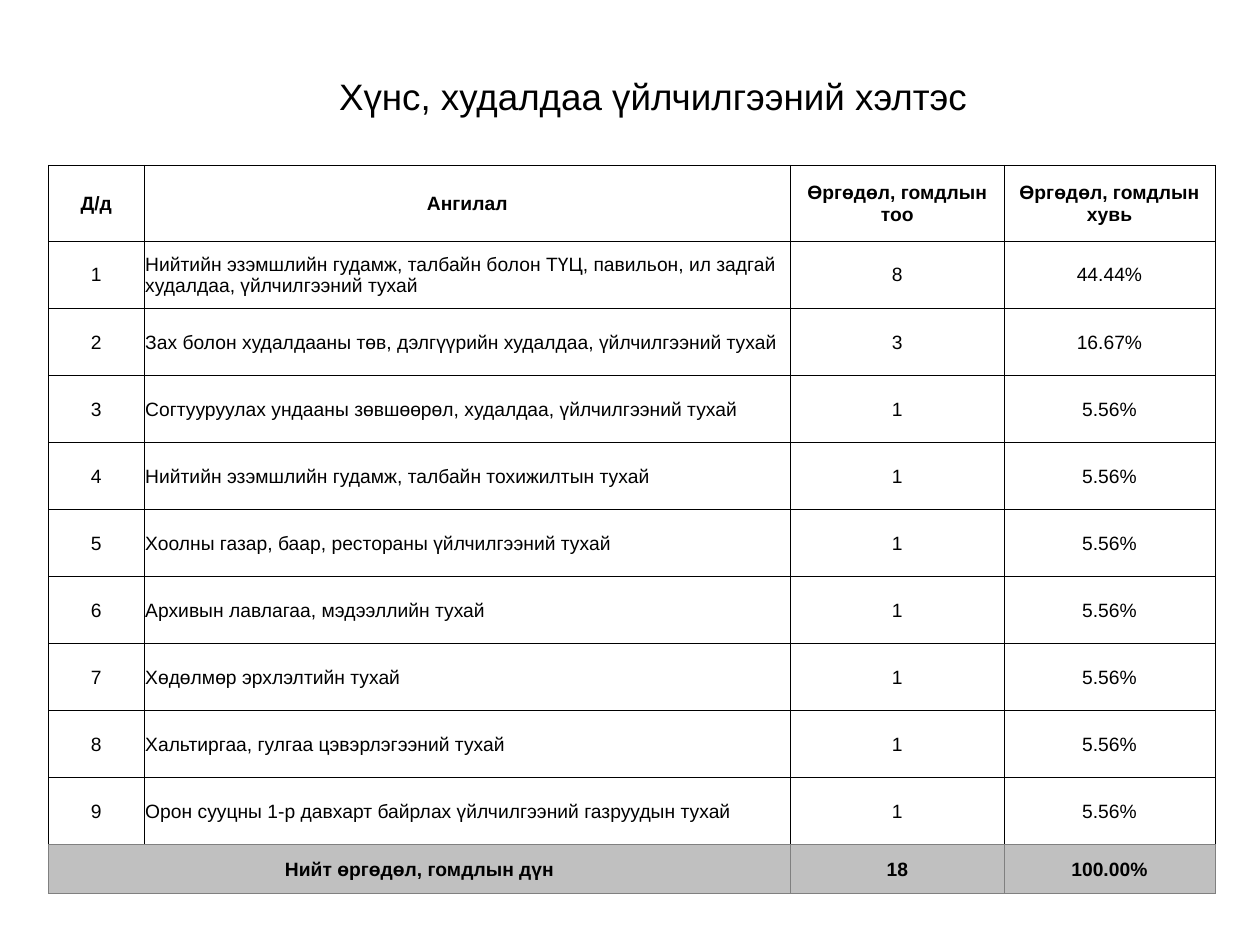
from lxml import etree
from pptx import Presentation
from pptx.dml.color import RGBColor
from pptx.enum.text import MSO_ANCHOR, PP_ALIGN
from pptx.oxml.ns import qn
from pptx.util import Pt

LEFT, CENTER = PP_ALIGN.LEFT, PP_ALIGN.CENTER
MIDDLE = MSO_ANCHOR.MIDDLE
FONT = "Arial"
BLACK, WHITE, GRAY, SILVER = "000000", "FFFFFF", "808080", "C0C0C0"
TITLE = "Хүнс, худалдаа үйлчилгээний хэлтэс"
HEADER = ["Д/д", "Ангилал", "Өргөдөл, гомдлын тоо", "Өргөдөл, гомдлын хувь"]
CATEGORIES = [
    ("Нийтийн эзэмшлийн гудамж, талбайн болон ТҮЦ, павильон, ил задгай "
     "худалдаа, үйлчилгээний тухай", "8", "44.44%"),
    ("Зах болон худалдааны төв, дэлгүүрийн худалдаа, үйлчилгээний тухай", "3", "16.67%"),
    ("Согтууруулах ундааны зөвшөөрөл, худалдаа, үйлчилгээний тухай", "1", "5.56%"),
    ("Нийтийн эзэмшлийн гудамж, талбайн тохижилтын тухай", "1", "5.56%"),
    ("Хоолны газар, баар, рестораны үйлчилгээний тухай", "1", "5.56%"),
    ("Архивын лавлагаа, мэдээллийн тухай", "1", "5.56%"),
    ("Хөдөлмөр эрхлэлтийн тухай", "1", "5.56%"),
    ("Хальтиргаа, гулгаа цэвэрлэгээний тухай", "1", "5.56%"),
    ("Орон сууцны 1-р давхарт байрлах үйлчилгээний газруудын тухай", "1", "5.56%"),
]
TOTAL = ["Нийт өргөдөл, гомдлын дүн", "", "18", "100.00%"]
COLUMN_WIDTHS = [54.5, 369.5, 122, 120.5]
ROW_HEIGHTS = [43.3] + [38.35] * len(CATEGORIES) + [28]


def color(value):
    """Turn a hex string into a colour."""
    return RGBColor.from_string(value)


def format_para(para, size, align, bold=False):
    """Set the font and alignment of a paragraph."""
    para.alignment = align
    para.font.name = FONT
    para.font.size = Pt(size)
    para.font.bold = bold
    para.font.color.rgb = color(BLACK)


def add_title(slide):
    """Fill and place the title placeholder."""
    title = slide.shapes.title
    title.left, title.top, title.width, title.height = Pt(37.5), Pt(18), Pt(654), Pt(77)
    frame = title.text_frame
    frame.text = TITLE
    frame.word_wrap = True
    frame.vertical_anchor = MIDDLE
    frame.margin_left = Pt(24.7)
    para = frame.paragraphs[0]
    para.line_spacing = 0.9
    format_para(para, 21, CENTER)


def set_borders(cell, line_color, bottom_color):
    """Draw half-point borders on the four sides of a cell."""
    properties = cell._tc.get_or_add_tcPr()
    for side in "LRTB":
        line = etree.SubElement(properties, qn(f"a:ln{side}"), w=str(Pt(0.5)))
        fill = etree.SubElement(line, qn("a:solidFill"))
        value = bottom_color if side == "B" else line_color
        etree.SubElement(fill, qn("a:srgbClr"), val=value)


def format_cell(cell, text, fill, align, bold):
    """Write the text of a cell and set its look."""
    cell.text = text
    cell.vertical_anchor = MIDDLE
    cell.margin_left = cell.margin_right = cell.margin_top = Pt(0.7)
    cell.margin_bottom = 0
    cell.fill.solid()
    cell.fill.fore_color.rgb = color(fill)
    format_para(cell.text_frame.paragraphs[0], 11, align, bold)


def add_complaint_table(slide):
    """Add the table of complaints by category with its total row."""
    numbered = [[str(number), *row] for number, row in enumerate(CATEGORIES, 1)]
    rows = [HEADER, *numbered, TOTAL]
    last = len(rows) - 1
    table = slide.shapes.add_table(
        len(rows), len(HEADER), Pt(27.8), Pt(94.5),
        Pt(sum(COLUMN_WIDTHS)), Pt(sum(ROW_HEIGHTS))).table
    table.first_row = table.horz_banding = False
    for column, width in zip(table.columns, COLUMN_WIDTHS):
        column.width = Pt(width)
    for index, (row, height) in enumerate(zip(rows, ROW_HEIGHTS)):
        table.rows[index].height = Pt(height)
        is_total = index == last
        is_body = 0 < index < last
        for position, text in enumerate(row):
            cell = table.cell(index, position)
            set_borders(cell, GRAY if is_total else BLACK,
                        GRAY if index >= last - 1 else BLACK)
            align = LEFT if is_body and position == 1 else CENTER
            format_cell(cell, text, SILVER if is_total else WHITE, align, not is_body)
    table.cell(last, 0).merge(table.cell(last, 1))


def main():
    """Build and save the deck."""
    deck = Presentation()
    deck.slide_width, deck.slide_height = Pt(720), Pt(540)
    slide = deck.slides.add_slide(deck.slide_layouts[5])
    add_title(slide)
    add_complaint_table(slide)
    deck.save("out.pptx")


if __name__ == "__main__":
    main()
